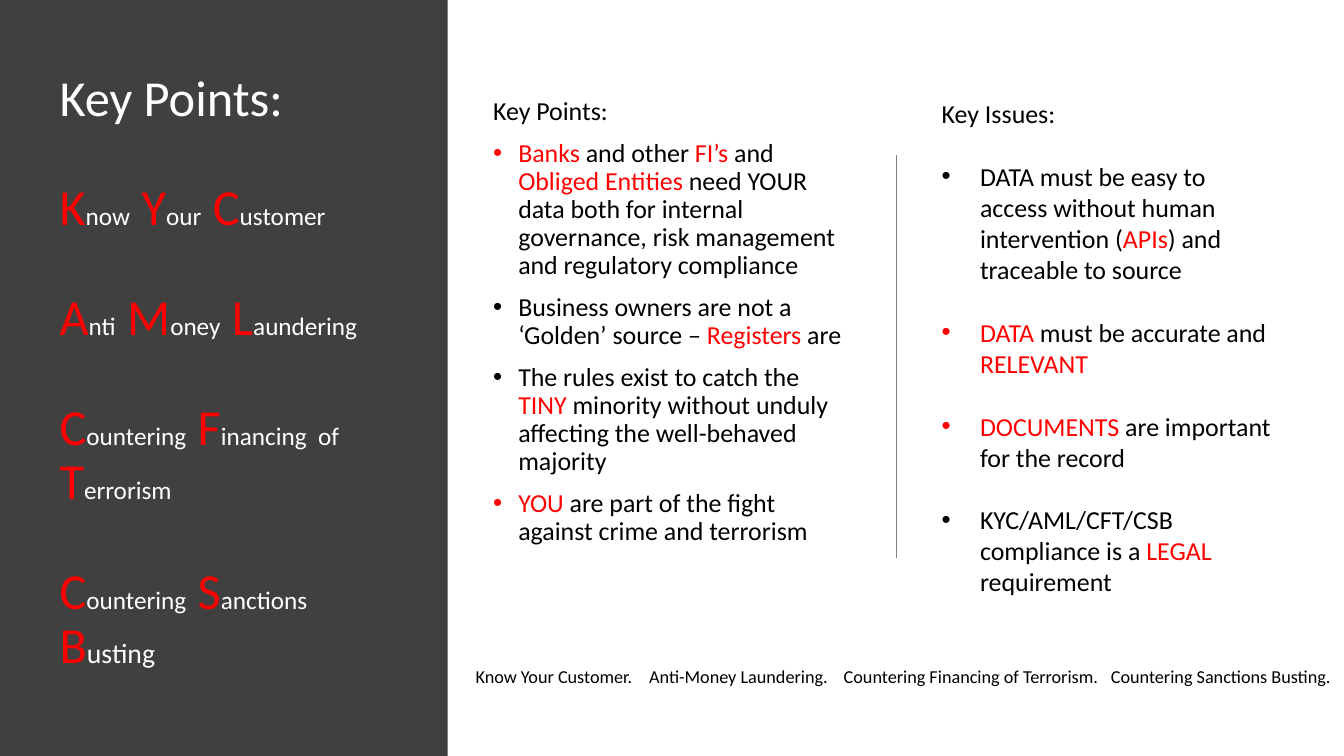
from lxml import etree
from pptx import Presentation
from pptx import util as u
from pptx.dml import color
from pptx.enum import shapes, text
from pptx.oxml import ns

RED, WHITE, BLACK = "FF0000", "FFFFFF", "000000"


def tint(code):
    return color.RGBColor.from_string(code)


def apply(item, form):
    for name, value in form.items():
        setattr(item, name, value)


class Page:
    face = "Calibri"
    list_size = 18.5

    def __init__(self, deck):
        self.slide = deck.slides.add_slide(deck.slide_layouts[3])
        self.shapes = self.slide.shapes

    def place(self, shape, box):
        apply(shape, dict(zip(("left", "top", "width", "height"), map(u.Inches, box))))
        apply(shape.text_frame, {
            "word_wrap": True,
            "auto_size": text.MSO_AUTO_SIZE.NONE,
            "vertical_anchor": text.MSO_ANCHOR.TOP,
        })
        return shape.text_frame

    def para(self, frame, first, gap=0, line=0.9):
        para = frame.paragraphs[0] if first else frame.add_paragraph()
        apply(para, {
            "alignment": text.PP_ALIGN.LEFT,
            "line_spacing": line,
            "space_before": u.Pt(0 if first else gap),
            "space_after": u.Pt(0),
        })
        return para

    def run(self, para, words, size, code):
        run = para.add_run()
        run.text = words
        apply(run.font, {"name": self.face, "size": u.Pt(size)})
        run.font.color.rgb = tint(code)

    def bullet(self, para, indent, code):
        props = para._p.get_or_add_pPr()
        apply_at = {"marL": u.Inches(indent), "indent": -u.Inches(indent)}
        for name, value in apply_at.items():
            props.set(name, str(value))
        if not indent:
            etree.SubElement(props, ns.qn("a:buNone"))
            return
        tone = etree.SubElement(props, ns.qn("a:buClr"))
        etree.SubElement(tone, ns.qn("a:srgbClr")).set("val", code)
        etree.SubElement(props, ns.qn("a:buFont")).set("typeface", "Arial")
        etree.SubElement(props, ns.qn("a:buChar")).set("char", "•")

    def panel(self, box, code):
        panel = self.shapes.add_shape(
            shapes.MSO_SHAPE.RECTANGLE, *map(u.Inches, box))
        panel.shadow.inherit = False
        panel.fill.solid()
        panel.fill.fore_color.rgb = tint(code)
        panel.line.fill.background()
        self.shapes.title.element.addprevious(panel.element)

    def title(self, box, head, terms):
        frame = self.place(self.shapes.title, box)
        self.run(self.para(frame, True), head, 36, WHITE)
        for term in terms:
            para = self.para(frame, False, 39.5)
            for spot, word in enumerate(term.split()):
                if spot:
                    self.run(para, " ", 36, WHITE)
                if word[0].isupper():
                    self.run(para, word[0], 36, RED)
                    word = word[1:]
                self.run(para, word, 19.8 if word == "usting" else 18, WHITE)

    def points(self, index, box, head, items, indent, gap, line):
        frame = self.place(self.slide.placeholders[index], box)
        for spot, item in enumerate([head] + items):
            para = self.para(frame, spot == 0, gap, line)
            self.bullet(para, indent if spot else 0,
                        RED if item.startswith("*") else BLACK)
            for part, words in enumerate(item.split("*")):
                if words:
                    self.run(para, words, self.list_size, RED if part % 2 else BLACK)

    def rule(self, start, end, code):
        rule = self.shapes.add_connector(
            shapes.MSO_CONNECTOR.STRAIGHT, *map(u.Inches, start + end))
        rule.line.color.rgb = tint(code)
        rule.line.width = u.Pt(1)
        etree.SubElement(rule.element.spPr, ns.qn("a:effectLst"))

    def footer(self, box, terms, stops):
        frame = self.place(self.shapes.add_textbox(0, 0, 0, 0), box)
        para = self.para(frame, True)
        tabs = etree.SubElement(para._p.get_or_add_pPr(), ns.qn("a:tabLst"))
        for stop in stops:
            tab = etree.SubElement(tabs, ns.qn("a:tab"))
            tab.set("pos", str(u.Inches(stop)))
            tab.set("algn", "l")
        self.run(para, "\t".join(terms), 13, BLACK)


def main():
    deck = Presentation()
    deck.slide_width, deck.slide_height = u.Inches(13.33), u.Inches(7.5)
    page = Page(deck)
    page.panel((0, 0, 4.44, 7.5), "404040")
    page.title((0.49, 0.67, 3.6, 5.65), "Key Points:", [
        "Know Your Customer",
        "Anti Money Laundering",
        "Countering Financing of Terrorism",
        "Countering Sanctions Busting",
    ])
    page.points(1, (4.79, 0.92, 3.75, 4.77), "Key Points:", [
        "*Banks* and other *FI’s* and *Obliged Entities *need YOUR data both for "
        "internal governance, risk management and regulatory compliance",
        "Business owners are not a ‘Golden’ source – *Registers* are",
        "The rules exist to catch the *TINY* minority without unduly affecting "
        "the well-behaved majority",
        "*YOU* are part of the fight against crime and terrorism",
    ], 0.25, 10, 0.9)
    page.rule((8.89, 1.54), (8.89, 5.54), "808080")
    page.points(2, (9.24, 0.92, 3.5, 4.77), "Key Issues:", [
        "DATA must be easy to access without human intervention (*APIs*) and "
        "traceable to source",
        "*DATA* must be accurate and *RELEVANT*",
        "*DOCUMENTS* are important for the record",
        "KYC/AML/CFT/CSB compliance is a *LEGAL* requirement",
    ], 0.38, 22.5, 1.0)
    page.footer((4.62, 6.58, 8.86, 0.3), [
        "Know Your Customer.",
        "Anti-Money Laundering.",
        "Countering Financing of Terrorism.",
        "Countering Sanctions Busting.",
    ], (1.72, 3.65, 6.3))
    deck.save("out.pptx")


if __name__ == "__main__":
    main()
